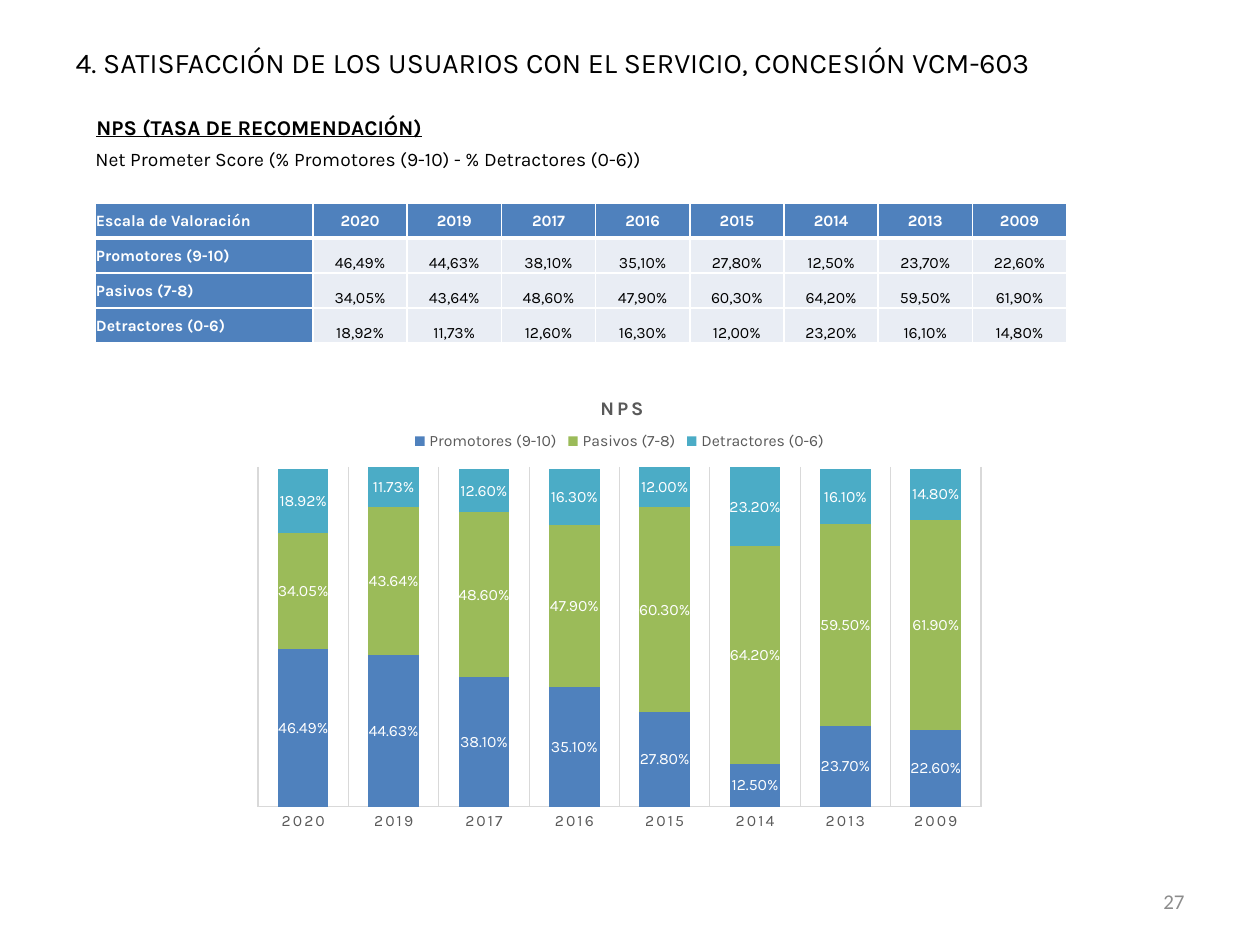
from dataclasses import dataclass

from lxml import etree
from pptx import Presentation
from pptx.chart.data import CategoryChartData
from pptx.dml.color import RGBColor
from pptx.enum.chart import XL_CHART_TYPE, XL_LABEL_POSITION, XL_LEGEND_POSITION, XL_TICK_MARK
from pptx.enum.text import MSO_ANCHOR, MSO_AUTO_SIZE, PP_ALIGN
from pptx.oxml import parse_xml
from pptx.oxml.ns import nsdecls, qn
from pptx.util import Emu, Pt

LEFT, CENTER, RIGHT, JUSTIFY = PP_ALIGN.LEFT, PP_ALIGN.CENTER, PP_ALIGN.RIGHT, PP_ALIGN.JUSTIFY
TOP, MIDDLE, BOTTOM = MSO_ANCHOR.TOP, MSO_ANCHOR.MIDDLE, MSO_ANCHOR.BOTTOM
NO_AUTOFIT = MSO_AUTO_SIZE.NONE
STACKED = XL_CHART_TYPE.COLUMN_STACKED
LABEL_CENTER = XL_LABEL_POSITION.CENTER
LEGEND_TOP = XL_LEGEND_POSITION.TOP
NO_TICK = XL_TICK_MARK.NONE
TITLE_ONLY = 5
EMU_PER_PX = 914400 / 126


@dataclass(frozen=True)
class Theme:
    font: str = "Karla"
    number_font: str = "Calibri"
    black: str = "000000"
    white: str = "FFFFFF"
    header: str = "4F81BD"
    cell: str = "E9EDF4"
    muted: str = "595959"
    page_number: str = "8C8C8C"
    grid: str = "D9D9D9"
    series: tuple = ("4F81BD", "9BBB59", "4BACC6")
    title_size: float = 16.2
    heading_size: float = 12
    body_size: float = 11
    small_size: float = 9


THEME = Theme()
YEARS = ["2020", "2019", "2017", "2016", "2015", "2014", "2013", "2009"]
RATINGS = {
    "Promotores (9-10)": [0.4649, 0.4463, 0.381, 0.351, 0.278, 0.125, 0.237, 0.226],
    "Pasivos (7-8)": [0.3405, 0.4364, 0.486, 0.479, 0.603, 0.642, 0.595, 0.619],
    "Detractores (0-6)": [0.1892, 0.1173, 0.126, 0.163, 0.12, 0.232, 0.161, 0.148],
}


def px(length):
    return Emu(round(length * EMU_PER_PX))


def style_font(font, size, color, bold=False, name=THEME.font):
    font.name, font.size, font.bold = name, Pt(size), bold
    font.color.rgb = RGBColor.from_string(color)


def write(frame, text, size, color=THEME.black, align=LEFT, bold=False, name=THEME.font):
    para = frame.paragraphs[0]
    para.alignment = align
    span = para.add_run()
    span.text = text
    style_font(span.font, size, color, bold, name)
    return span


def add_title(page, text):
    title = page.shapes.title
    title.left, title.top, title.width, title.height = px(63), px(38), px(1123), px(48)
    frame = title.text_frame
    frame.auto_size, frame.vertical_anchor = NO_AUTOFIT, MIDDLE
    write(frame, text, THEME.title_size)


def add_text(page, bounds, text, size, anchor=TOP, **style):
    box = page.shapes.add_textbox(*map(px, bounds))
    box.text_frame.word_wrap = True
    box.text_frame.vertical_anchor = anchor
    return write(box.text_frame, text, size, **style)


def set_borders(cell, top, bottom):
    """Draw white cell borders; top and bottom are widths in points."""
    properties = cell._tc.get_or_add_tcPr()
    widths = {"lnL": 1, "lnR": 1, "lnT": top, "lnB": bottom}
    for position, (side, width) in enumerate(widths.items()):
        properties.insert(position, parse_xml(
            f'<a:{side} {nsdecls("a")} w="{Pt(width)}"><a:solidFill>'
            f'<a:srgbClr val="{THEME.white}"/></a:solidFill></a:{side}>'))


def fill_cell(cell, text, row, column):
    is_header = row == 0 or column == 0
    cell.margin_left = cell.margin_right = cell.margin_top = px(1)
    cell.margin_bottom = 0
    cell.vertical_anchor = MIDDLE if is_header else BOTTOM
    cell.fill.solid()
    cell.fill.fore_color.rgb = RGBColor.from_string(THEME.header if is_header else THEME.cell)
    set_borders(cell, top=3 if row == 1 else 1, bottom=3 if row == 0 else 1)
    write(cell.text_frame, text, THEME.small_size, THEME.white if is_header else THEME.black,
          LEFT if column == 0 else CENTER, is_header)


def add_ratings_table(page):
    rows = [["Escala de Valoración", *YEARS]]
    for name, values in RATINGS.items():
        rows.append([name, *(f"{value:.2%}".replace(".", ",") for value in values)])
    label_width, year_width, row_height = 218, 94.25, 35
    table = page.shapes.add_table(
        len(rows), len(rows[0]), px(95), px(203),
        px(label_width + year_width * len(YEARS)), px(row_height * len(rows))).table
    for index, column in enumerate(table.columns):
        column.width = px(year_width if index else label_width)
    for row, texts in enumerate(rows):
        table.rows[row].height = px(row_height)
        for column, text in enumerate(texts):
            fill_cell(table.cell(row, column), text, row, column)


def place(element, inner=False, **fractions):
    """Give a chart part a manual layout in fractions of the chart."""
    layout = element.find(qn("c:layout"))
    if layout is None:
        layout = etree.Element(qn("c:layout"))
        before = element.find(qn("c:tx"))
        if before is None:
            before = element.find(qn("c:legendPos"))
        if before is None:
            element.insert(0, layout)
        else:
            before.addnext(layout)
    manual = etree.SubElement(layout, qn("c:manualLayout"))
    settings = {"layoutTarget": "inner"} if inner else {}
    settings.update(xMode="edge", yMode="edge", **fractions)
    for tag, value in settings.items():
        etree.SubElement(manual, qn(f"c:{tag}")).set("val", str(value))


def style_line(line):
    line.color.rgb = RGBColor.from_string(THEME.grid)
    line.width = Pt(0.75)


def style_axes(chart):
    years = chart.category_axis
    years.major_tick_mark = years.minor_tick_mark = NO_TICK
    years.has_major_gridlines = True
    style_line(years.major_gridlines.format.line)
    style_line(years.format.line)
    style_font(years.tick_labels.font, THEME.small_size, THEME.muted)
    years.tick_labels.font._element.set("spc", "120")
    share = chart.value_axis
    share.minimum_scale, share.maximum_scale = 0, 1
    share.has_major_gridlines = share.visible = False


def style_series(plot):
    plot.gap_width, plot.overlap, plot.vary_by_categories = 79, 100, False
    for series, color in zip(plot.series, THEME.series):
        series.format.fill.solid()
        series.format.fill.fore_color.rgb = RGBColor.from_string(color)
        labels = series.data_labels
        labels.show_value, labels.position = True, LABEL_CENTER
        labels.number_format, labels.number_format_is_linked = "0.00%", False
        style_font(labels.font, THEME.small_size, THEME.white)


def add_nps_chart(page):
    data = CategoryChartData(number_format="0.00%")
    data.categories = YEARS
    for name, values in RATINGS.items():
        data.add_series(name, values)
    chart = page.shapes.add_chart(STACKED, px(243), px(368), px(753), px(472), data).chart
    style_font(chart.font, 10, THEME.black)
    title = write(chart.chart_title.text_frame, "NPS", THEME.body_size, THEME.muted, CENTER, True)
    title.font._element.set("spc", "150")
    chart.has_legend = True
    chart.legend.position, chart.legend.include_in_layout = LEGEND_TOP, False
    style_font(chart.legend.font, THEME.small_size, THEME.muted)
    style_axes(chart)
    style_series(chart.plots[0])
    place(chart.chart_title._element, x=0.47, y=0.05)
    place(chart.legend._element, x=0.22, y=0.13, w=0.56, h=0.05)
    place(chart._chartSpace.chart.plotArea, inner=True, x=0.02, y=0.21, w=0.96, h=0.72)


def main():
    deck = Presentation()
    deck.slide_width, deck.slide_height = px(1260), px(945)
    page = deck.slides.add_slide(deck.slide_layouts[TITLE_ONLY])
    add_title(page, "4. SATISFACCIÓN DE LOS USUARIOS CON EL SERVICIO, CONCESIÓN VCM-603")
    heading = add_text(page, (84, 108, 1062, 38), "NPS (TASA DE RECOMENDACIÓN)",
                       THEME.heading_size, align=JUSTIFY, bold=True)
    heading.font.underline = True
    add_text(page, (83, 141, 885, 36),
             "Net Prometer Score (% Promotores (9-10) - % Detractores (0-6))",
             THEME.body_size, align=JUSTIFY)
    add_ratings_table(page)
    add_nps_chart(page)
    add_text(page, (903, 876, 294, 50), "27", THEME.heading_size, MIDDLE,
             color=THEME.page_number, align=RIGHT, name=THEME.number_font)
    deck.save("out.pptx")


if __name__ == "__main__":
    main()
